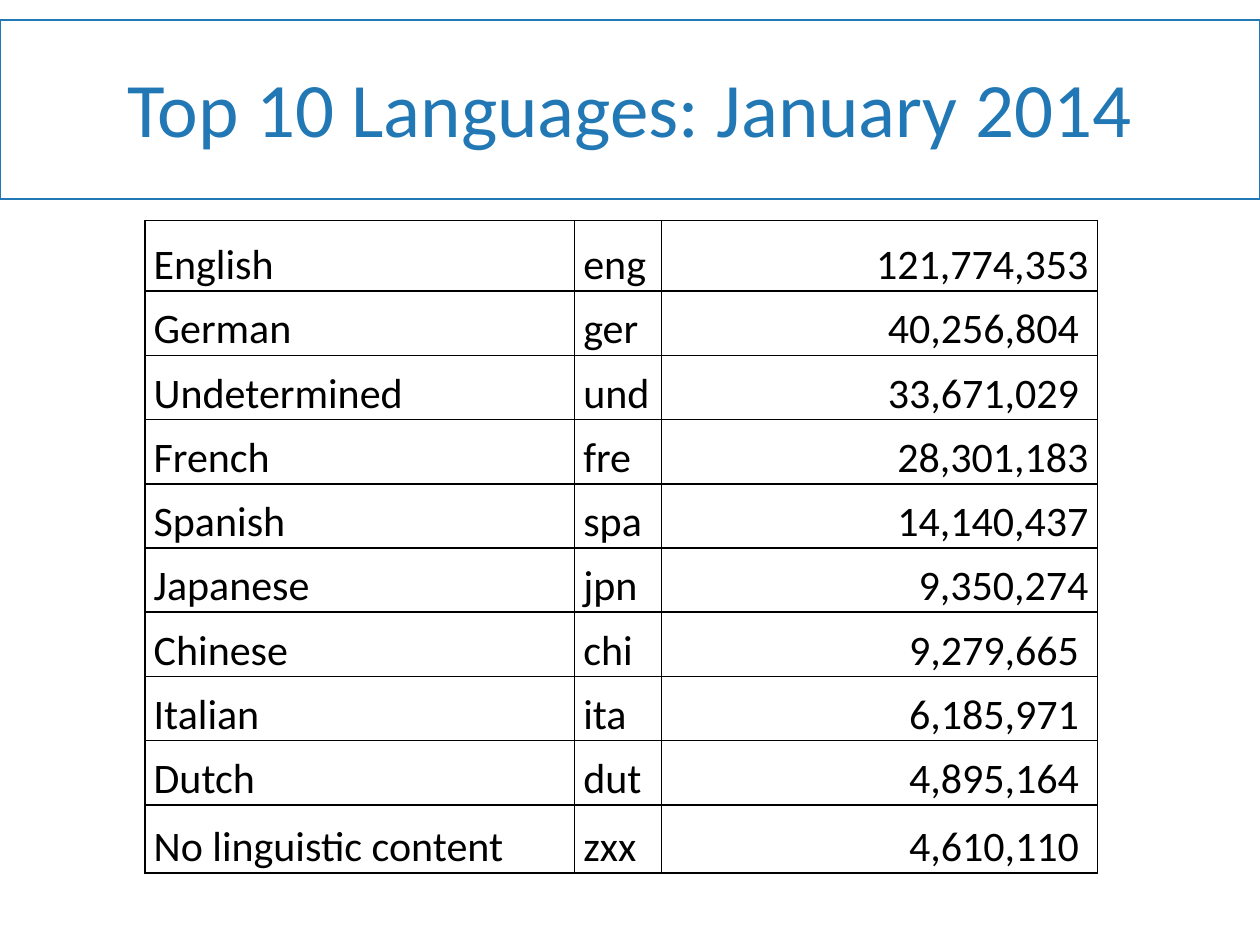
from lxml import etree
from pptx import Presentation
from pptx.dml.color import RGBColor
from pptx.enum.shapes import MSO_SHAPE
from pptx.enum.text import MSO_ANCHOR, PP_ALIGN
from pptx.oxml.ns import qn
from pptx.util import Inches, Pt

RECTANGLE = MSO_SHAPE.RECTANGLE
MIDDLE, BOTTOM = MSO_ANCHOR.MIDDLE, MSO_ANCHOR.BOTTOM
LEFT, CENTER, RIGHT = PP_ALIGN.LEFT, PP_ALIGN.CENTER, PP_ALIGN.RIGHT
BLUE = RGBColor(0x21, 0x78, 0xB5)
BLACK = RGBColor(0, 0, 0)
FONT = "Calibri"

TITLE = "Top 10 Languages: January 2014"
LANGUAGES = [
    ("English", "eng", "121,774,353"),
    ("German", "ger", "40,256,804 "),
    ("Undetermined", "und", "33,671,029 "),
    ("French", "fre", "28,301,183"),
    ("Spanish", "spa", "14,140,437"),
    ("Japanese", "jpn", "9,350,274"),
    ("Chinese", "chi", "9,279,665 "),
    ("Italian", "ita", "6,185,971 "),
    ("Dutch", "dut", "4,895,164 "),
    ("No linguistic content", "zxx", "4,610,110 "),
]
COLUMN_WIDTHS = [3.41, 0.69, 3.46]
COLUMN_ALIGNS = [LEFT, LEFT, RIGHT]
ROW_HEIGHTS = [0.56] + [0.51] * (len(LANGUAGES) - 2) + [0.54]


def write(frame, text, size, color, align, spacing):
    frame.text = text
    paragraph = frame.paragraphs[0]
    paragraph.alignment = align
    paragraph.line_spacing = spacing
    font = paragraph.runs[0].font
    font.name, font.size = FONT, Pt(size)
    font.color.rgb = color


def add_borders(cell):
    properties = cell._tc.get_or_add_tcPr()
    for index, side in enumerate(("a:lnL", "a:lnR", "a:lnT", "a:lnB")):
        line = etree.Element(qn(side), w=str(Pt(1)))
        fill = etree.SubElement(line, qn("a:solidFill"))
        etree.SubElement(fill, qn("a:srgbClr"), val=str(BLACK))
        properties.insert(index, line)


def add_title(slide):
    title = slide.shapes.add_shape(
        RECTANGLE, 0, Inches(0.16), Inches(10), Inches(1.42))
    title.shadow.inherit = False
    title.fill.background()
    title.line.color.rgb = BLUE
    title.line.width = Pt(1)
    frame = title.text_frame
    frame.word_wrap = True
    frame.vertical_anchor = MIDDLE
    frame.margin_left = frame.margin_right = Inches(0.5)
    frame.margin_top, frame.margin_bottom = Inches(0.4), Inches(0.35)
    write(frame, TITLE, 44, BLUE, CENTER, 0.9)


def add_language_table(slide):
    table = slide.shapes.add_table(
        len(LANGUAGES), len(COLUMN_WIDTHS), Inches(1.15), Inches(1.75),
        Inches(sum(COLUMN_WIDTHS)), Inches(sum(ROW_HEIGHTS))).table
    table.first_row = table.horz_banding = False
    for column, width in zip(table.columns, COLUMN_WIDTHS):
        column.width = Inches(width)
    for row, height, language in zip(table.rows, ROW_HEIGHTS, LANGUAGES):
        row.height = Inches(height)
        for cell, text, align in zip(row.cells, language, COLUMN_ALIGNS):
            cell.fill.background()
            cell.vertical_anchor = BOTTOM
            cell.margin_left = cell.margin_right = Inches(0.07)
            cell.margin_top = cell.margin_bottom = 0
            write(cell.text_frame, text, 24, BLACK, align, 1.15)
            add_borders(cell)


def main():
    deck = Presentation()
    deck.slide_width, deck.slide_height = Inches(10), Inches(7.5)
    slide = deck.slides.add_slide(deck.slide_layouts[6])
    add_title(slide)
    add_language_table(slide)
    deck.save("out.pptx")


if __name__ == "__main__":
    main()
